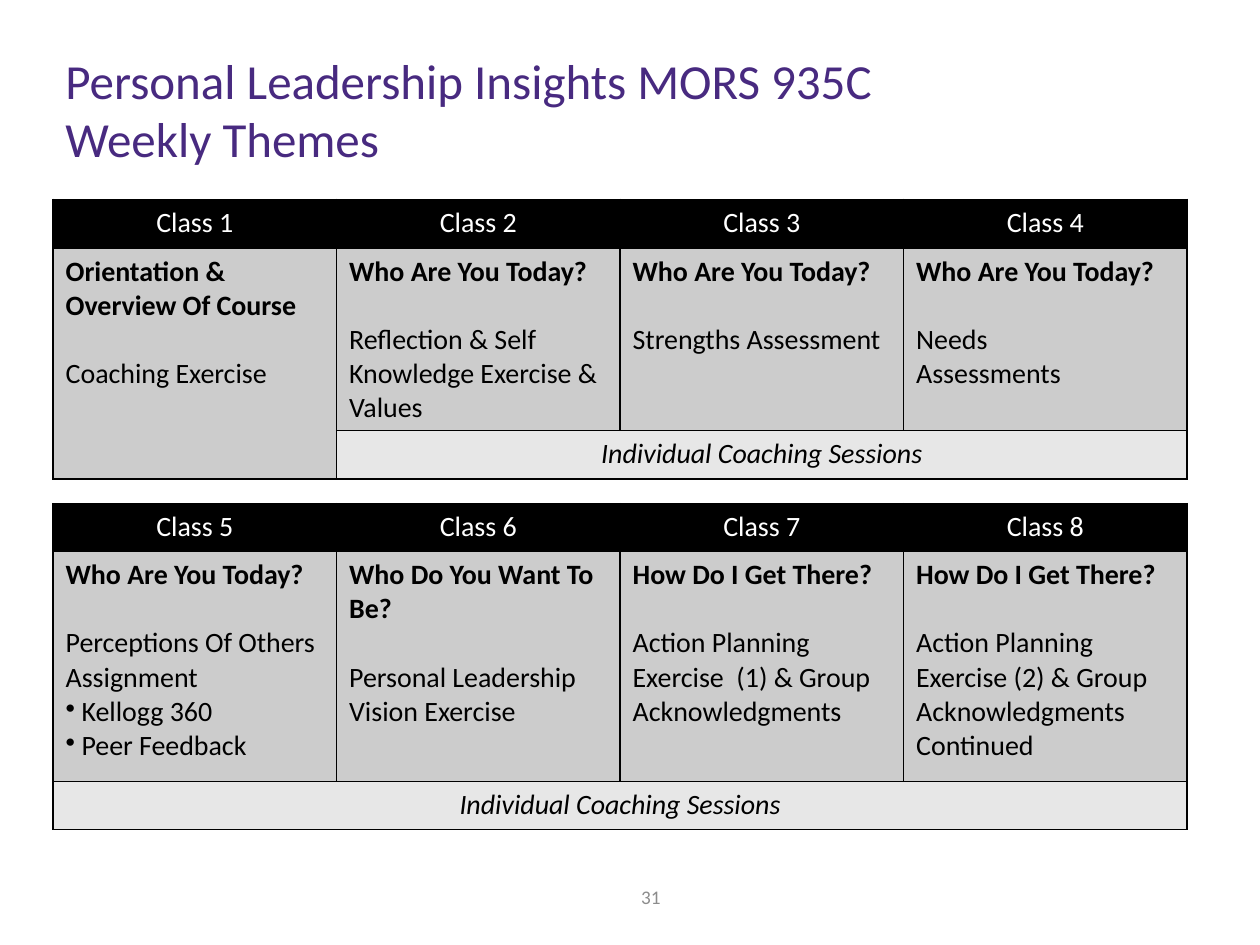
from lxml import etree
from pptx import Presentation
from pptx.dml.color import RGBColor as RGB
from pptx.enum.text import MSO_ANCHOR as Anchor, PP_ALIGN as Align
from pptx.oxml.ns import qn
from pptx.util import Cm, Pt

FONT = "Calibri"
LEFT, WIDTH = 1.07, 22.86
COLS = 4
BLACK, WHITE, GREY, PALE = "000000", "FFFFFF", "CCCCCC", "E7E7E7"
BULLET = "• "
TODAY = "Who Are You Today?"
ROUTE = "How Do I Get There?"
COACH = "Individual Coaching Sessions"

FIRST = [
    ("Orientation & Overview Of Course", ["Coaching Exercise"]),
    (TODAY, ["Reflection & Self Knowledge Exercise & Values"]),
    (TODAY, ["Strengths Assessment"]),
    (TODAY, ["Needs", "Assessments"]),
]
SECOND = [
    (TODAY, ["Perceptions Of Others Assignment",
             BULLET + "Kellogg 360", BULLET + "Peer Feedback"]),
    ("Who Do You Want To Be?", ["Personal Leadership Vision Exercise"]),
    (ROUTE, ["Action Planning", "Exercise  (1) & Group Acknowledgments"]),
    (ROUTE, ["Action Planning Exercise (2) & Group Acknowledgments Continued"]),
]


def color(code):
    return RGB.from_string(code)


def style(para, size, code, bold=False, italic=False, align=Align.LEFT):
    para.alignment = align
    for run in para.runs:
        font = run.font
        font.name, font.size = FONT, Pt(size)
        font.bold, font.italic = bold, italic
        font.color.rgb = color(code)


def add_text(slide, box, text, size, code, align=Align.LEFT):
    frame = slide.shapes.add_textbox(*map(Cm, box)).text_frame
    frame.word_wrap = True
    frame.vertical_anchor = Anchor.MIDDLE
    para = frame.paragraphs[0]
    para.text = text
    style(para, size, code, align=align)


def paint(cell, code):
    """Give the cell a thin black border and a plain fill."""
    props = cell._tc.get_or_add_tcPr()
    for side in ("a:lnL", "a:lnR", "a:lnT", "a:lnB"):
        line = etree.SubElement(props, qn(side), w=str(Pt(1)))
        fill = etree.SubElement(line, qn("a:solidFill"))
        etree.SubElement(fill, qn("a:srgbClr"), val=BLACK)
    cell.fill.solid()
    cell.fill.fore_color.rgb = color(code)


def label(cell, text, code, italic=False):
    cell.text = text
    style(cell.text_frame.paragraphs[0], 16, code, italic=italic,
          align=Align.CENTER)


def add_bullet(para):
    props = para._p.get_or_add_pPr()
    indent = Cm(0.32)
    props.set("marL", str(indent))
    props.set("indent", str(-indent))
    etree.SubElement(props, qn("a:buChar"), char=BULLET.strip())


def write_theme(cell, head, lines):
    """Bold heading, a one-line gap, then the details."""
    frame = cell.text_frame
    frame.text = "\n".join([head] + [line.removeprefix(BULLET) for line in lines])
    top, *rest = frame.paragraphs
    style(top, 16, BLACK, bold=True)
    rest[0].space_before = Pt(19.5)
    for para, line in zip(rest, lines):
        if line.startswith(BULLET):
            add_bullet(para)
        style(para, 16, BLACK)


def add_plan(slide, top, heights, start, themes):
    """Table of four classes; returns it for merging."""
    box = (LEFT, top, WIDTH, sum(heights))
    table = slide.shapes.add_table(len(heights), COLS, *map(Cm, box)).table
    table.first_row = table.horz_banding = False
    for row, height, fill in zip(table.rows, heights, (BLACK, GREY, PALE)):
        row.height = Cm(height)
        for cell in row.cells:
            paint(cell, fill)
    for col, (head, lines) in enumerate(themes):
        label(table.cell(0, col), f"Class {start + col}", WHITE)
        write_theme(table.cell(1, col), head, lines)
    return table


def add_coach(table, col):
    """Join the last row from col onward into one coaching band."""
    cell = table.cell(2, col)
    cell.merge(table.cell(2, COLS - 1))
    label(cell, COACH, BLACK, italic=True)


def main():
    deck = Presentation()
    deck.slide_width, deck.slide_height = Cm(25.4), Cm(19.05)
    slide = deck.slides.add_slide(deck.slide_layouts[6])
    add_text(slide, (LEFT, 0.8, WIDTH, 2.79),
             "Personal Leadership Insights MORS 935C\nWeekly Themes", 28, "482A80")

    table = add_plan(slide, 4.02, (0.98, 3.68, 0.98), 1, FIRST)
    table.cell(1, 0).merge(table.cell(2, 0))
    add_coach(table, 1)
    table = add_plan(slide, 10.15, (0.97, 4.63, 0.97), 5, SECOND)
    add_coach(table, 0)

    add_text(slide, (10.16, 17.56, 5.92, 1.02), "31", 11, "8C8C8C", Align.CENTER)
    deck.save("out.pptx")


if __name__ == "__main__":
    main()
